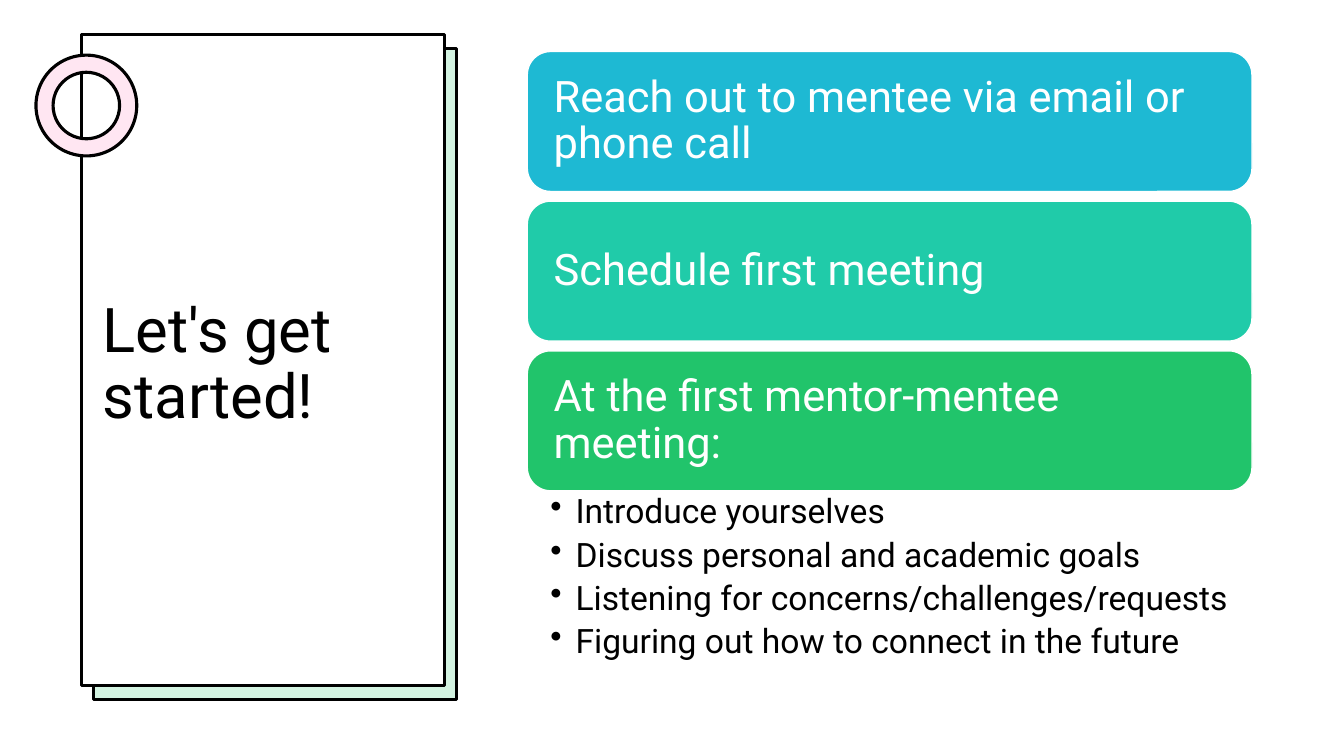
import lxml.etree
import pptx
import pptx.util
import pptx.dml.color
import pptx.enum.shapes
import pptx.enum.text
import pptx.oxml.ns

Pt = pptx.util.Pt
RGBColor = pptx.dml.color.RGBColor
MSO_SHAPE = pptx.enum.shapes.MSO_SHAPE
ANCHOR = pptx.enum.text.MSO_ANCHOR
qn = pptx.oxml.ns.qn

BLACK = RGBColor(0x00, 0x00, 0x00)
WHITE = RGBColor(0xFF, 0xFF, 0xFF)
MINT = RGBColor(0xD3, 0xF3, 0xE1)
PINK = RGBColor(0xFF, 0xE6, 0xF2)
BLUE = RGBColor(0x1E, 0xB9, 0xD3)
TEAL = RGBColor(0x20, 0xCB, 0xA9)
GREEN = RGBColor(0x21, 0xC4, 0x6B)

FONT = "Roboto"
STEPS = [
    ("Reach out to mentee via email or phone call\u00a0", BLUE),
    ("Schedule first meeting", TEAL),
    ("At the first mentor-mentee meeting:", GREEN),
]
TOPICS = [
    "Introduce yourselves\u00a0",
    "Discuss personal and academic goals",
    "Listening for concerns/challenges/requests",
    "Figuring out how to connect in the future",
]
STEP_LEFT, STEP_TOP, STEP_WIDTH, STEP_HEIGHT = 376.6, 36.8, 517.7, 100
STEP_PITCH = 106.9


def add_bullet(p):
    pPr = p._p.get_or_add_pPr()
    pPr.set("marL", str(Pt(18)))
    pPr.set("indent", str(-Pt(18)))
    lxml.etree.SubElement(pPr, qn("a:buChar")).set("char", "•")


def write(sp, lines, size, color, anchor=ANCHOR.MIDDLE, insets=(7.2, 3.6, 7.2, 3.6),
          space_after=0, bullets=False):
    tf = sp.text_frame
    tf.word_wrap = True
    tf.auto_size = pptx.enum.text.MSO_AUTO_SIZE.NONE
    tf.vertical_anchor = anchor
    tf.margin_left, tf.margin_top, tf.margin_right, tf.margin_bottom = map(Pt, insets)
    for i, line in enumerate(lines):
        p = tf.paragraphs[0] if i == 0 else tf.add_paragraph()
        p.alignment = pptx.enum.text.PP_ALIGN.LEFT
        p.line_spacing = 0.9
        p.space_before = Pt(0)
        p.space_after = Pt(space_after)
        if bullets:
            add_bullet(p)
        r = p.add_run()
        r.text = line
        r.font.name = FONT
        r.font.size = Pt(size)
        r.font.color.rgb = color


def add_box(slide, kind, box, fill, line=BLACK, width=2.25):
    sp = slide.shapes.add_shape(kind, *map(Pt, box))
    sp.shadow.inherit = False
    sp.fill.solid()
    sp.fill.fore_color.rgb = fill
    sp.line.color.rgb = line
    sp.line.width = Pt(width)
    return sp


def add_title(slide, text, box):
    sp = slide.shapes.title
    sp.left, sp.top, sp.width, sp.height = map(Pt, box)
    write(sp, [text], 44, BLACK)
    sp.element.getparent().append(sp.element)


def add_step(slide, row, text, fill):
    box = (STEP_LEFT, STEP_TOP + row * STEP_PITCH, STEP_WIDTH, STEP_HEIGHT)
    sp = add_box(slide, MSO_SHAPE.ROUNDED_RECTANGLE, box, fill, WHITE, 1)
    write(sp, [text], 31, WHITE, insets=(14, 14, 14, 14))


def add_topics(slide, top):
    sp = slide.shapes.add_textbox(Pt(STEP_LEFT), Pt(top), Pt(STEP_WIDTH), Pt(134))
    write(sp, TOPICS, 24, BLACK, anchor=ANCHOR.TOP, insets=(16.5, 2.9, 17, 2.9),
          space_after=5, bullets=True)


def main():
    prs = pptx.Presentation()
    prs.slide_width, prs.slide_height = Pt(960), Pt(540)
    slide = prs.slides.add_slide(prs.slide_layouts[5])
    slide.background.fill.solid()
    slide.background.fill.fore_color.rgb = WHITE

    add_box(slide, MSO_SHAPE.RECTANGLE, (66.8, 34.6, 259.2, 465.1), MINT)
    add_box(slide, MSO_SHAPE.RECTANGLE, (58.5, 24.4, 259.2, 465.1), WHITE)
    ring = add_box(slide, MSO_SHAPE.DONUT, (25.7, 39.4, 72, 72), PINK)
    ring.adjustments[0] = 0.17
    add_title(slide, "Let's get started!", (66.2, 94.3, 244.8, 333.4))

    for row, (text, fill) in enumerate(STEPS):
        add_step(slide, row, text, fill)
    add_topics(slide, STEP_TOP + 2 * STEP_PITCH + STEP_HEIGHT)

    prs.save("out.pptx")


if __name__ == "__main__":
    main()
